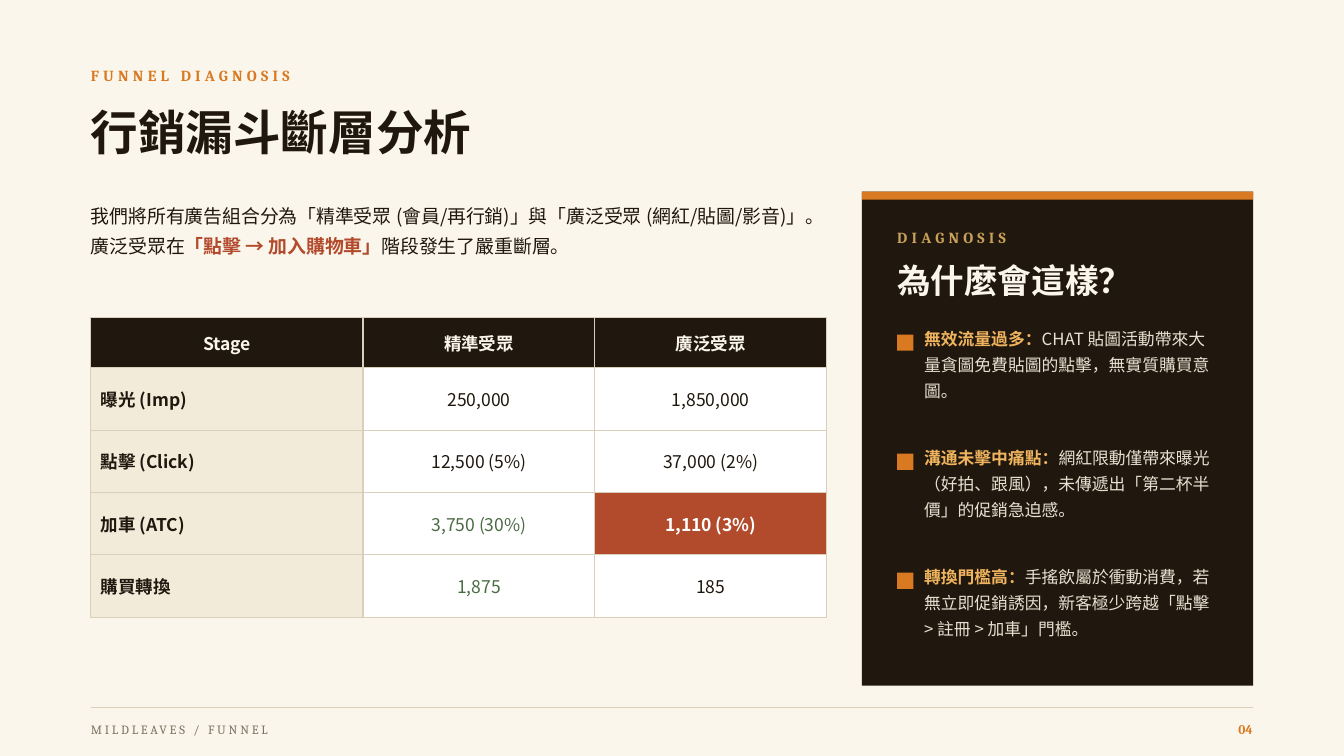
from dataclasses import dataclass

import lxml.etree
import pptx
import pptx.dml.color
import pptx.enum.shapes
import pptx.enum.text
import pptx.oxml.ns
import pptx.util

Cm = pptx.util.Cm
Pt = pptx.util.Pt
Align = pptx.enum.text.PP_ALIGN
Anchor = pptx.enum.text.MSO_ANCHOR
qn = pptx.oxml.ns.qn

LATIN, HEADING, BODY = "Cambria", "Noto Sans CJK TC", "Noto Sans CJK SC"
CREAM, INK, ORANGE, RUST = "FAF6EC", "20180E", "D97A22", "B24A2C"
LIGHT, SAND, RULE, WHITE, GREEN = "FBF6EC", "F2EBDA", "D9CFBB", "FFFFFF", "4B6B45"
LEFT, RIGHT = 2.29, 31.57
PANEL_LEFT, PANEL_TOP, PANEL_WIDTH = 21.72, 4.83, 9.86
PANEL_TEXT_LEFT = 22.61
REASON_TOP, REASON_STEP = 8.13, 3.0


@dataclass
class Style:
    font: str
    size: float
    color: str
    bold: bool | None = None
    tracking: float = 0
    align: Align = Align.LEFT
    line_spacing: float | None = None


@dataclass
class Span:
    text: str
    color: str | None = None
    bold: bool | None = None


@dataclass
class TextBlock:
    left: float
    top: float
    width: float
    height: float
    style: Style
    spans: list[Span]
    anchor: Anchor = Anchor.MIDDLE


@dataclass
class CellLook:
    fill: str
    color: str
    bold: bool = False
    align: Align = Align.CENTER


def rgb(color: str) -> pptx.dml.color.RGBColor:
    return pptx.dml.color.RGBColor.from_string(color)


def write(para, style: Style, spans: list[Span]) -> None:
    para.alignment = style.align
    if style.line_spacing:
        para.line_spacing = style.line_spacing
    font = para.font
    font.name, font.size, font.bold = style.font, Pt(style.size), style.bold
    font.color.rgb = rgb(style.color)
    properties = para._p.pPr.find(qn("a:defRPr"))
    if style.tracking:
        properties.set("spc", str(int(style.tracking * 100)))
    lxml.etree.SubElement(properties, qn("a:ea"), typeface=style.font)
    for span in spans:
        run = para.add_run()
        run.text = span.text
        if span.color:
            run.font.color.rgb = rgb(span.color)
        if span.bold is not None:
            run.font.bold = span.bold


def add_text(page, block: TextBlock) -> None:
    box = page.shapes.add_textbox(Cm(block.left), Cm(block.top), Cm(block.width), Cm(block.height))
    frame = box.text_frame
    frame.word_wrap = True
    frame.vertical_anchor = block.anchor
    frame.margin_left = frame.margin_right = frame.margin_top = frame.margin_bottom = 0
    write(frame.paragraphs[0], block.style, block.spans)


def add_rectangle(page, left: float, top: float, width: float, height: float, color: str) -> None:
    shape = page.shapes.add_shape(
        pptx.enum.shapes.MSO_SHAPE.RECTANGLE, Cm(left), Cm(top), Cm(width), Cm(height))
    shape.shadow.inherit = False
    shape.fill.solid()
    shape.fill.fore_color.rgb = rgb(color)
    shape.line.fill.background()


def add_footer_rule(page, top: float) -> None:
    line = page.shapes.add_connector(
        pptx.enum.shapes.MSO_CONNECTOR.STRAIGHT, Cm(LEFT), Cm(top), Cm(RIGHT), Cm(top))
    line.line.color.rgb = rgb(RULE)
    line.line.width = Pt(1)
    lxml.etree.SubElement(line._element.spPr, qn("a:effectLst"))


def add_borders(cell, color: str) -> None:
    properties = cell._tc.get_or_add_tcPr()
    for index, side in enumerate(("lnL", "lnR", "lnT", "lnB")):
        border = lxml.etree.Element(qn(f"a:{side}"), w=str(Pt(1)))
        fill = lxml.etree.SubElement(border, qn("a:solidFill"))
        lxml.etree.SubElement(fill, qn("a:srgbClr"), val=color)
        properties.insert(index, border)


def cell_look(row: int, column: int) -> CellLook:
    if row == 0:
        return CellLook(INK, LIGHT, True)
    if column == 0:
        return CellLook(SAND, INK, True, Align.LEFT)
    if (row, column) == (3, 2):
        return CellLook(RUST, WHITE, True)
    return CellLook(WHITE, GREEN if column == 1 and row >= 3 else INK)


def add_funnel_table(page) -> None:
    rows = [
        ("Stage", "精準受眾", "廣泛受眾"),
        ("曝光 (Imp)", "250,000", "1,850,000"),
        ("點擊 (Click)", "12,500 (5%)", "37,000 (2%)"),
        ("加車 (ATC)", "3,750 (30%)", "1,110 (3%)"),
        ("購買轉換", "1,875", "185"),
    ]
    widths = (6.86, 5.84, 5.84)
    table = page.shapes.add_table(
        len(rows), len(widths), Cm(LEFT), Cm(8), Cm(sum(widths)), Cm(7.55)).table
    table.first_row = table.horz_banding = False
    for column, width in enumerate(widths):
        table.columns[column].width = Cm(width)
    for row, values in enumerate(rows):
        table.rows[row].height = Cm(1.57 if row else 1.27)
        for column, value in enumerate(values):
            cell, look = table.cell(row, column), cell_look(row, column)
            cell.vertical_anchor = Anchor.MIDDLE
            cell.fill.solid()
            cell.fill.fore_color.rgb = rgb(look.fill)
            add_borders(cell, RULE)
            style = Style(BODY, 12.5, look.color, look.bold, align=look.align)
            write(cell.text_frame.paragraphs[0], style, [Span(value)])


def add_diagnosis_panel(page) -> None:
    reasons = [
        ("無效流量過多：", "CHAT 貼圖活動帶來大量貪圖免費貼圖的點擊，無實質購買意圖。"),
        ("溝通未擊中痛點：", "網紅限動僅帶來曝光（好拍、跟風），未傳遞出「第二杯半價」的促銷急迫感。"),
        ("轉換門檻高：", "手搖飲屬於衝動消費，若無立即促銷誘因，新客極少跨越「點擊 > 註冊 > 加車」門檻。"),
    ]
    add_rectangle(page, PANEL_LEFT, PANEL_TOP, PANEL_WIDTH, 12.45, INK)
    add_rectangle(page, PANEL_LEFT, PANEL_TOP, PANEL_WIDTH, 0.2, ORANGE)
    add_text(page, TextBlock(PANEL_TEXT_LEFT, 5.59, 7.62, 0.76,
                             Style(LATIN, 11, "C9A15A", True, 3), [Span("DIAGNOSIS")]))
    add_text(page, TextBlock(PANEL_TEXT_LEFT, 6.35, 8.08, 1.4,
                             Style(HEADING, 24, LIGHT, True), [Span("為什麼會這樣？")]))
    reason_style = Style(BODY, 12, "E7DFCF", line_spacing=1.3)
    for index, (cause, detail) in enumerate(reasons):
        top = REASON_TOP + index * REASON_STEP
        add_rectangle(page, PANEL_TEXT_LEFT, top + 0.3, 0.41, 0.41, ORANGE)
        spans = [Span(cause, "F0B45E", True), Span(detail)]
        add_text(page, TextBlock(23.29, top, 7.44, 2.92, reason_style, spans, Anchor.TOP))


def main() -> None:
    deck = pptx.Presentation()
    deck.slide_width, deck.slide_height = Cm(33.87), Cm(19.05)
    page = deck.slides.add_slide(deck.slide_layouts[6])
    page.background.fill.solid()
    page.background.fill.fore_color.rgb = rgb(CREAM)

    add_text(page, TextBlock(LEFT, 1.52, 10.16, 0.76,
                             Style(LATIN, 11, ORANGE, True, 3), [Span("FUNNEL DIAGNOSIS")]))
    add_text(page, TextBlock(LEFT, 2.29, 22.86, 2.03,
                             Style(HEADING, 34, INK, True), [Span("行銷漏斗斷層分析")]))
    add_text(page, TextBlock(LEFT, 4.95, 18.54, 2.54, Style(BODY, 13.5, INK, line_spacing=1.35), [
        Span("我們將所有廣告組合分為「精準受眾 (會員/再行銷)」與「廣泛受眾 (網紅/貼圖/影音)」。廣泛受眾在"),
        Span("「點擊 → 加入購物車」", RUST, True),
        Span("階段發生了嚴重斷層。"),
    ], Anchor.TOP))
    add_funnel_table(page)
    add_diagnosis_panel(page)
    add_footer_rule(page, 17.83)
    add_text(page, TextBlock(LEFT, 17.98, 20.32, 0.81,
                             Style(LATIN, 9, "7C7160", tracking=2), [Span("MILDLEAVES / FUNNEL")]))
    add_text(page, TextBlock(28.52, 17.98, 3.05, 0.81,
                             Style(LATIN, 9.5, ORANGE, True, align=Align.RIGHT), [Span("04")]))
    deck.save("out.pptx")


if __name__ == "__main__":
    main()
